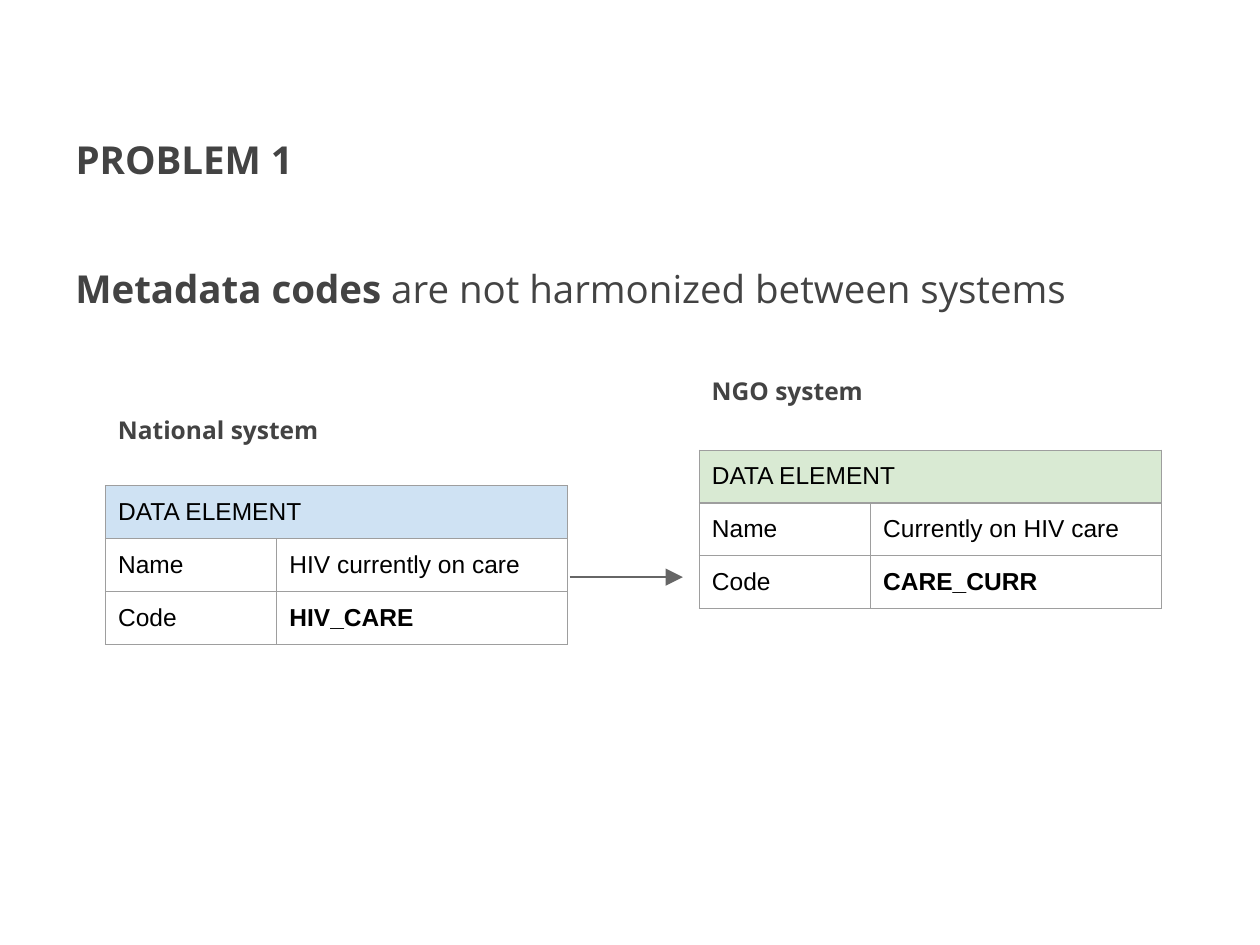
"""Build a slide comparing the metadata codes of two health information systems."""
from dataclasses import dataclass

from lxml import etree
from pptx import Presentation
from pptx import util as u
from pptx.dml.color import RGBColor
from pptx.enum import shapes, text
from pptx.oxml import ns

COLORS = {
    "heading": "434343",
    "body": "000000",
    "border": "9E9E9E",
    "arrow": "666666",
    "national": "CFE2F3",
    "ngo": "D9EAD3",
}
INSET = u.Pt(7.2)
COLUMN_WIDTHS = (97.9, 166.3)
ROW_HEIGHT = 30.24
LABEL_SIZE = (242, 27.4)
BORDER_WIDTH = 0.75


@dataclass(frozen=True)
class System:
    label: str
    element_name: str
    code: str
    fill: str
    left: float
    label_top: float
    table_top: float


SYSTEMS = (
    System("National system", "HIV currently on care", "HIV_CARE", "national", 60.3, 229.7, 277.6),
    System("NGO system", "Currently on HIV care", "CARE_CURR", "ngo", 399.6, 207.4, 257.2),
)


def rgb(name: str) -> RGBColor:
    return RGBColor.from_string(COLORS[name])


def style_run(run, size: float, bold: bool, face: str, color: str) -> None:
    run.font.size = u.Pt(size)
    run.font.bold = bold
    run.font.name = face
    run.font.color.rgb = rgb(color)


def set_frame(frame, anchor) -> None:
    frame.word_wrap = True
    frame.auto_size = text.MSO_AUTO_SIZE.NONE
    frame.vertical_anchor = anchor
    frame.margin_left = frame.margin_right = INSET
    frame.margin_top = frame.margin_bottom = INSET


def write_heading(shape, parts: tuple, size: float, anchor=text.MSO_ANCHOR.TOP) -> None:
    set_frame(shape.text_frame, anchor)
    paragraph = shape.text_frame.paragraphs[0]
    paragraph.alignment = text.PP_ALIGN.LEFT
    for words, bold in parts:
        run = paragraph.add_run()
        run.text = words
        style_run(run, size, bold, "Open Sans", "heading")


def add_box(slide, left: float, top: float, width: float, height: float):
    return slide.shapes.add_textbox(u.Pt(left), u.Pt(top), u.Pt(width), u.Pt(height))


def set_borders(cell) -> None:
    properties = cell._tc.get_or_add_tcPr()
    for side in ("a:lnL", "a:lnR", "a:lnT", "a:lnB"):
        edge = etree.SubElement(properties, ns.qn(side), w=str(u.Pt(BORDER_WIDTH)))
        fill = etree.SubElement(edge, ns.qn("a:solidFill"))
        etree.SubElement(fill, ns.qn("a:srgbClr"), val=COLORS["border"])


def write_cell(cell, words: str, bold: bool) -> None:
    cell.margin_left = cell.margin_right = INSET
    cell.margin_top = cell.margin_bottom = INSET
    cell.text_frame.text = words
    for run in cell.text_frame.paragraphs[0].runs:
        style_run(run, 14, bold, "Arial", "body")


def add_element_table(slide, system: System) -> None:
    rows = (("DATA ELEMENT", ""), ("Name", system.element_name), ("Code", system.code))
    table = slide.shapes.add_table(
        len(rows), len(COLUMN_WIDTHS), u.Pt(system.left), u.Pt(system.table_top),
        u.Pt(sum(COLUMN_WIDTHS)), u.Pt(ROW_HEIGHT * len(rows)),
    ).table
    table.first_row = table.horz_banding = False
    for column, width in zip(table.columns, COLUMN_WIDTHS):
        column.width = u.Pt(width)
    for row_index, row in enumerate(rows):
        table.rows[row_index].height = u.Pt(ROW_HEIGHT)
        for column_index, words in enumerate(row):
            cell = table.cell(row_index, column_index)
            write_cell(cell, words, bold=words == system.code)
            set_borders(cell)
            if row_index == 0:
                cell.fill.solid()
                cell.fill.fore_color.rgb = rgb(system.fill)
            else:
                cell.fill.background()
    table.cell(0, 0).merge(table.cell(0, 1))


def add_arrow(slide, start: float, end: float, y: float) -> None:
    arrow = slide.shapes.add_connector(
        shapes.MSO_CONNECTOR.STRAIGHT, u.Pt(start), u.Pt(y), u.Pt(end), u.Pt(y)
    )
    arrow.line.color.rgb = rgb("arrow")
    arrow.line.width = u.Pt(0.75)
    etree.SubElement(
        arrow.line._get_or_add_ln(), ns.qn("a:tailEnd"), type="triangle", w="lg", len="lg"
    )
    etree.SubElement(arrow._element.spPr, ns.qn("a:effectLst"))


def main() -> None:
    deck = Presentation()
    deck.slide_width, deck.slide_height = u.Pt(720), u.Pt(540)
    slide = deck.slides.add_slide(deck.slide_layouts[5])

    title = slide.shapes.title
    title.left, title.top = u.Pt(36), u.Pt(21.6)
    title.width, title.height = u.Pt(648), u.Pt(90)
    write_heading(title, (("PROBLEM 1", True),), 22, text.MSO_ANCHOR.BOTTOM)

    statement = add_box(slide, 36, 144, 648, 61.2)
    write_heading(
        statement,
        (("Metadata codes ", True), ("are not harmonized between systems", False)),
        22,
    )

    for system in SYSTEMS:
        add_element_table(slide, system)
        label = add_box(slide, system.left, system.label_top, *LABEL_SIZE)
        write_heading(label, ((system.label, True),), 14)

    add_arrow(slide, 325.5, 390.3, 329.8)
    deck.save("out.pptx")


if __name__ == "__main__":
    main()
